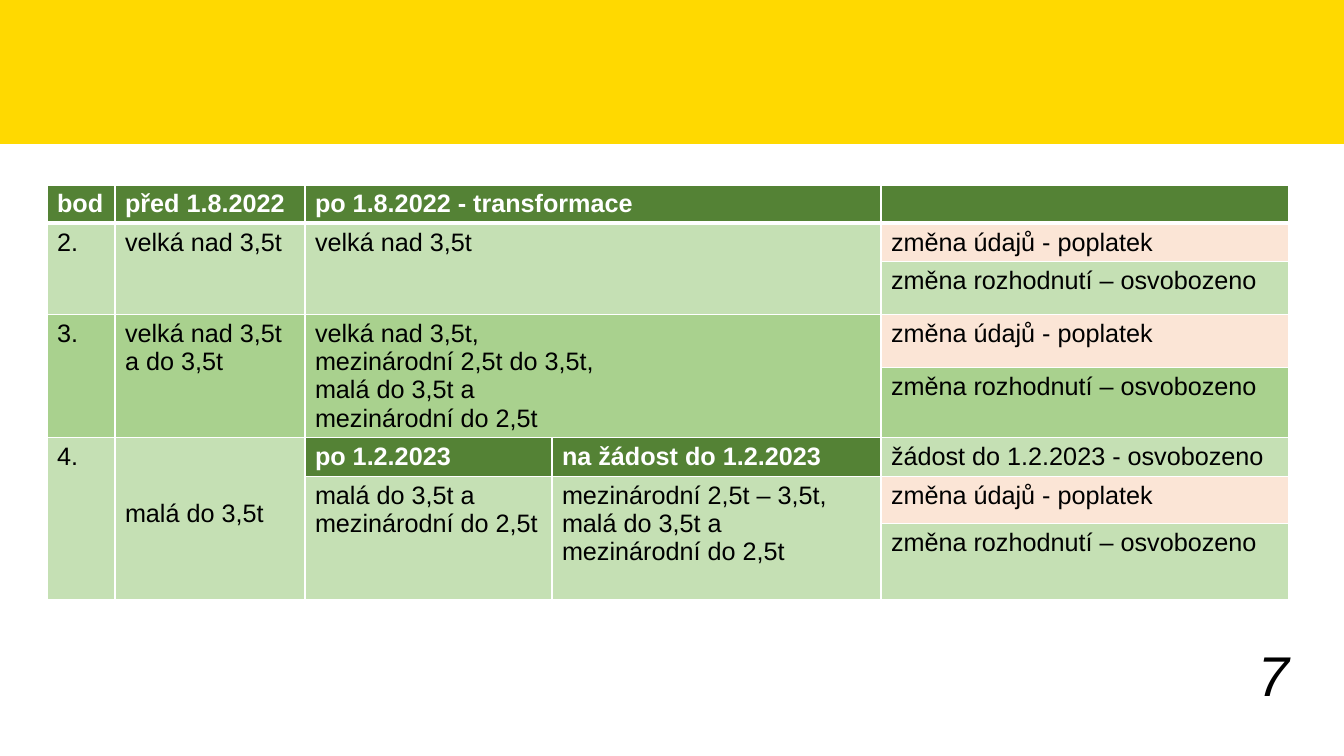
import pptx
import pptx.dml.color
import pptx.enum.shapes
import pptx.enum.text
import pptx.oxml
import pptx.util

RGBColor = pptx.dml.color.RGBColor
PP_ALIGN = pptx.enum.text.PP_ALIGN
MSO_ANCHOR = pptx.enum.text.MSO_ANCHOR

YELLOW = RGBColor(0xFF, 0xD9, 0x00)
DARK_GREEN = RGBColor(0x54, 0x82, 0x35)
MID_GREEN = RGBColor(0xA9, 0xD1, 0x8E)
LIGHT_GREEN = RGBColor(0xC5, 0xE0, 0xB4)
PEACH = RGBColor(0xFB, 0xE5, 0xD6)
WHITE = RGBColor(0xFF, 0xFF, 0xFF)
BLACK = RGBColor(0x00, 0x00, 0x00)

EMU_PER_PX = 914400 / 100.8
SLIDE_SIZE = (1344, 756)

HEADING = {"size": pptx.util.Pt(18), "bold": True}
BODY = {"size": pptx.util.Pt(18), "bold": False}
PAGE_NUMBER = {"size": pptx.util.Pt(40), "italic": True}

COLUMN_WIDTHS = (68, 190, 247, 329, 408)
ROW_HEIGHTS = (38, 38, 53, 53, 70, 39, 47, 76)

FEE = "změna údajů - poplatek"
EXEMPT = "změna rozhodnutí – osvobozeno"

# row, column, rows spanned, columns spanned, fill, text
LICENCE_CELLS = (
    (0, 0, 1, 1, DARK_GREEN, "bod"),
    (0, 1, 1, 1, DARK_GREEN, "před 1.8.2022"),
    (0, 2, 1, 2, DARK_GREEN, "po 1.8.2022 - transformace"),
    (0, 4, 1, 1, DARK_GREEN, ""),
    (1, 0, 2, 1, LIGHT_GREEN, "2."),
    (1, 1, 2, 1, LIGHT_GREEN, "velká nad 3,5t"),
    (1, 2, 2, 2, LIGHT_GREEN, "velká nad 3,5t"),
    (1, 4, 1, 1, PEACH, FEE),
    (2, 4, 1, 1, LIGHT_GREEN, EXEMPT),
    (3, 0, 2, 1, MID_GREEN, "3."),
    (3, 1, 2, 1, MID_GREEN, "velká nad 3,5t a do 3,5t"),
    (3, 2, 2, 2, MID_GREEN,
     "velká nad 3,5t,\nmezinárodní 2,5t do 3,5t,\nmalá do 3,5t a\nmezinárodní do 2,5t"),
    (3, 4, 1, 1, PEACH, FEE),
    (4, 4, 1, 1, MID_GREEN, EXEMPT),
    (5, 0, 3, 1, LIGHT_GREEN, "4."),
    (5, 1, 3, 1, LIGHT_GREEN, "malá do 3,5t"),
    (5, 2, 1, 1, DARK_GREEN, "po 1.2.2023"),
    (5, 3, 1, 1, DARK_GREEN, "na žádost do 1.2.2023"),
    (5, 4, 1, 1, LIGHT_GREEN, "žádost do 1.2.2023 - osvobozeno"),
    (6, 2, 2, 1, LIGHT_GREEN, "malá do 3,5t a mezinárodní do 2,5t"),
    (6, 3, 2, 1, LIGHT_GREEN, "mezinárodní 2,5t – 3,5t, malá do 3,5t a\nmezinárodní do 2,5t"),
    (6, 4, 1, 1, PEACH, FEE),
    (7, 4, 1, 1, LIGHT_GREEN, EXEMPT),
)


def px(length):
    return pptx.util.Emu(round(length * EMU_PER_PX))


class SlideBuilder:
    def __init__(self, slide, font_name="Arial", border_color=WHITE):
        self.slide = slide
        self.font_name = font_name
        self.border_color = border_color

    def fill_text(self, frame, text, style, color, align=PP_ALIGN.LEFT):
        frame.word_wrap = True
        frame.text = text
        for paragraph in frame.paragraphs:
            paragraph.alignment = align
            for part in (paragraph, *paragraph.runs):
                part.font.name = self.font_name
                part.font.color.rgb = color
                for attribute, value in style.items():
                    setattr(part.font, attribute, value)

    def band(self, left, top, width, height, color):
        band = self.slide.shapes.add_shape(
            pptx.enum.shapes.MSO_SHAPE.RECTANGLE, px(left), px(top), px(width), px(height))
        band.shadow.inherit = False
        band.fill.solid()
        band.fill.fore_color.rgb = color
        band.line.fill.background()

    def text(self, left, top, width, height, text, style, align):
        box = self.slide.shapes.add_textbox(px(left), px(top), px(width), px(height))
        box.text_frame.vertical_anchor = MSO_ANCHOR.BOTTOM
        self.fill_text(box.text_frame, text, style, BLACK, align)

    def borders(self, cell, widths):
        """Draw the cell edges; widths maps L, R, T and B, in that order, to points."""
        properties = cell._tc.get_or_add_tcPr()
        for side, width in widths.items():
            properties.append(pptx.oxml.parse_xml(
                f'<a:ln{side} xmlns:a="http://schemas.openxmlformats.org/drawingml/2006/main"'
                f' w="{pptx.util.Pt(width)}"><a:solidFill><a:srgbClr val="{self.border_color}"/>'
                f'</a:solidFill></a:ln{side}>'))

    def table(self, left, top, widths, heights, cells):
        frame = self.slide.shapes.add_table(
            len(heights), len(widths), px(left), px(top), px(sum(widths)), px(sum(heights)))
        table = frame.table
        table.first_row = table.horz_banding = False
        for column, width in zip(table.columns, widths):
            column.width = px(width)
        for row, height in zip(table.rows, heights):
            row.height = px(height)
        for row, column, row_span, column_span, color, text in cells:
            origin = table.cell(row, column)
            for r in range(row, row + row_span):
                for c in range(column, column + column_span):
                    cell = table.cell(r, c)
                    self.borders(cell, {"L": 1, "R": 1, "T": 3 if r == 1 else 1,
                                        "B": 3 if r == 0 else 1})
                    cell.fill.solid()
                    cell.fill.fore_color.rgb = color
            if row_span * column_span > 1:
                origin.merge(table.cell(row + row_span - 1, column + column_span - 1))
            heading = color == DARK_GREEN
            self.fill_text(origin.text_frame, text, HEADING if heading else BODY,
                           WHITE if heading else BLACK)
        return table


def main():
    presentation = pptx.Presentation()
    presentation.slide_width, presentation.slide_height = map(px, SLIDE_SIZE)
    builder = SlideBuilder(presentation.slides.add_slide(presentation.slide_layouts[6]))

    builder.band(0, 0, 1344, 144, YELLOW)
    licences = builder.table(47, 185, COLUMN_WIDTHS, ROW_HEIGHTS, LICENCE_CELLS)
    licences.cell(5, 1).margin_top = px(62)
    builder.text(997, 656, 302, 57, "7", PAGE_NUMBER, PP_ALIGN.RIGHT)

    presentation.save("out.pptx")


if __name__ == "__main__":
    main()
